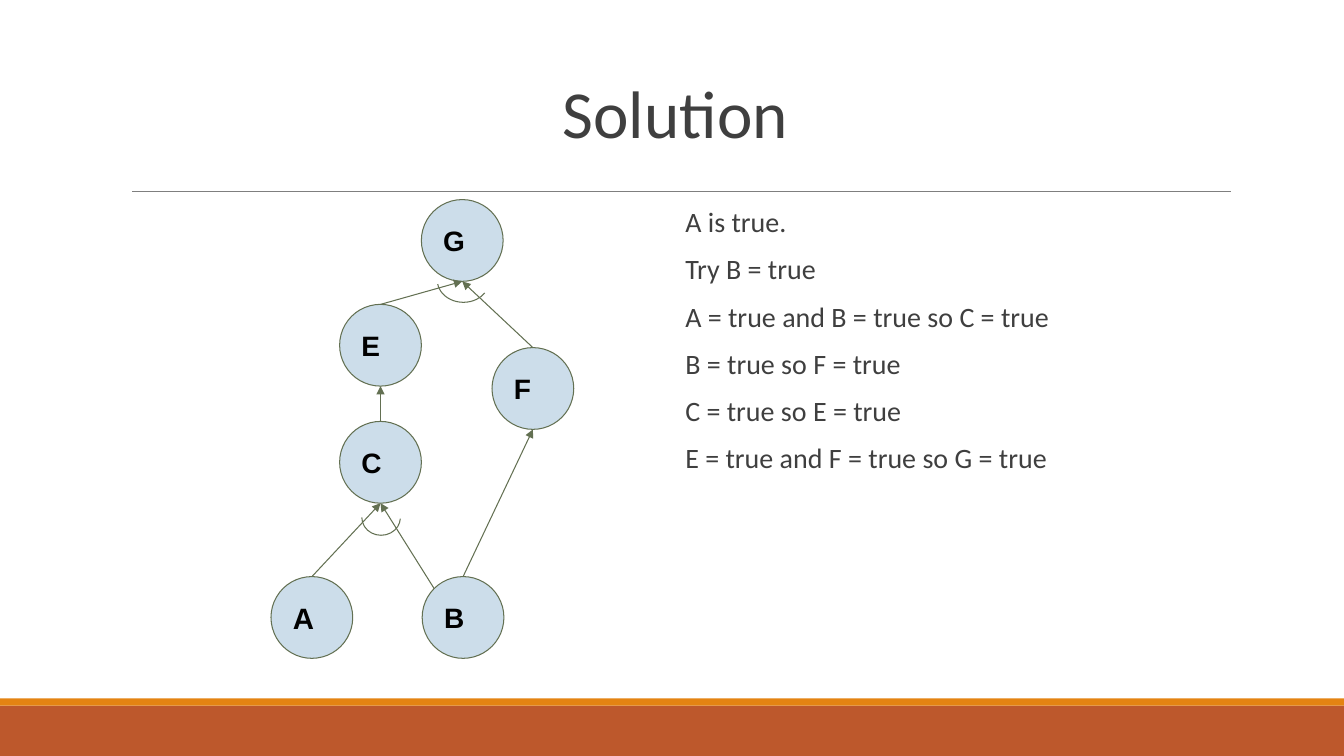
import math

import pptx
import pptx.dml.color
import pptx.enum.shapes
import pptx.enum.text
import pptx.oxml.ns
import pptx.util
from lxml import etree

Cm, Pt = pptx.util.Cm, pptx.util.Pt
qn = pptx.oxml.ns.qn
PRESET = pptx.enum.shapes.MSO_SHAPE
ALIGN = pptx.enum.text.PP_ALIGN
ANCHOR = pptx.enum.text.MSO_ANCHOR

COLOURS = {
    "band": "BD582C",
    "stripe": "E48312",
    "rule": "7F7F7F",
    "text": "3F3F3F",
    "label": "000000",
    "node": "CCDDEA",
    "edge": "637052",
}
DIAMETER = 2.06


def rgb(name):
    return pptx.dml.color.RGBColor.from_string(COLOURS[name])


def write(frame, *lines, size, font, colour, bold=False, align=ALIGN.LEFT,
          anchor=ANCHOR.TOP, spacing=1.0, before=0, insets=(0.25, 0.13, 0.25, 0.13)):
    """Fill a text frame with one unbulleted paragraph per line."""
    frame.word_wrap = True
    frame.auto_size = pptx.enum.text.MSO_AUTO_SIZE.NONE
    frame.vertical_anchor = anchor
    (frame.margin_left, frame.margin_top,
     frame.margin_right, frame.margin_bottom) = map(Cm, insets)
    for number, line in enumerate(lines):
        paragraph = frame.paragraphs[0] if number == 0 else frame.add_paragraph()
        paragraph.alignment = align
        paragraph.line_spacing = spacing
        paragraph.space_before = Pt(before)
        properties = paragraph._p.get_or_add_pPr()
        properties.set("marL", "0")
        properties.set("indent", "0")
        etree.SubElement(properties, qn("a:buNone"))
        run = paragraph.add_run()
        run.text = line
        run.font.size = Pt(size)
        run.font.name = font
        run.font.bold = bold
        run.font.color.rgb = rgb(colour)


class GraphSlide:
    """Holds the slide and the look shared by its elements."""

    line_width = Pt(0.75)

    def __init__(self, slide):
        self.slide = slide

    def placeholder(self, index, left, top, width, height, *lines, **style):
        holder = self.slide.placeholders[index]
        holder.left, holder.top = Cm(left), Cm(top)
        holder.width, holder.height = Cm(width), Cm(height)
        write(holder.text_frame, *lines, **style)

    def shape(self, preset, left, top, width, height, fill=None, line=None):
        shape = self.slide.shapes.add_shape(
            preset, Cm(left), Cm(top), Cm(width), Cm(height))
        shape.shadow.inherit = False
        if fill:
            shape.fill.solid()
            shape.fill.fore_color.rgb = rgb(fill)
        else:
            shape.fill.background()
        if line:
            shape.line.color.rgb = rgb(line)
            shape.line.width = self.line_width
        else:
            shape.line.fill.background()
        return shape

    def node(self, letter, left, top, size=20):
        circle = self.shape(PRESET.OVAL, left, top, DIAMETER, DIAMETER, "node", "edge")
        write(circle.text_frame, letter, size=size, font="Arial", colour="label",
              bold=True, anchor=ANCHOR.MIDDLE, insets=(0.25,) * 4)
        return circle

    def line(self, start, end, colour):
        connector = self.slide.shapes.add_connector(
            pptx.enum.shapes.MSO_CONNECTOR.STRAIGHT, *start, *end)
        connector.line.color.rgb = rgb(colour)
        connector.line.width = self.line_width
        etree.SubElement(connector._element.spPr, qn("a:effectLst"))
        return connector

    def arrow(self, source, target, angle=90):
        """Run from the source's rim, at an angle, to the target's bottom."""
        connector = self.line(rim(source, angle), rim(target, -90), "edge")
        if angle == 90:
            connector.begin_connect(source, 0)
        outline = connector._element.spPr.find(qn("a:ln"))
        etree.SubElement(outline, qn("a:tailEnd"), type="triangle")

    def arc(self, left, top, width, height, start, end):
        """Draw an arc between two clockwise angles in degrees."""
        arc = self.shape(PRESET.ARC, left, top, width, height, line="edge")
        # Angles are stored in 1/60000 degree, adjustments in 1/100000
        arc.adjustments[0], arc.adjustments[1] = start * 0.6, end * 0.6


def rim(circle, angle):
    radius = circle.width / 2
    turn = math.radians(angle)
    return (round(circle.left + radius + radius * math.cos(turn)),
            round(circle.top + radius - radius * math.sin(turn)))


def main():
    deck = pptx.Presentation()
    deck.slide_width, deck.slide_height = Cm(33.87), Cm(19.05)
    page = GraphSlide(deck.slides.add_slide(deck.slide_layouts[1]))

    # Footer bands and title rule
    page.shape(PRESET.RECTANGLE, 0, 17.78, 33.87, 1.27, "band")
    page.shape(PRESET.RECTANGLE, 0, 17.6, 33.87, 0.18, "stripe")
    page.line((Cm(3.33), Cm(4.83)), (Cm(31.01), Cm(4.83)), "rule")

    # Title and reasoning steps
    page.placeholder(0, 3.05, 0.79, 27.94, 4.04, "Solution",
                     size=48, font="Calibri", colour="text", align=ALIGN.CENTER,
                     anchor=ANCHOR.BOTTOM, spacing=0.85,
                     insets=(0.25, 0.13, 0.25, 0.99))
    page.placeholder(1, 17.27, 5.13, 13.72, 11.18,
                     "A is true.",
                     "Try B = true",
                     "A = true and B = true so C = true",
                     "B = true so F = true",
                     "C = true so E = true",
                     "E = true and F = true so G = true",
                     size=20, font="Calibri", colour="text", spacing=0.9, before=12,
                     insets=(0, 0.13, 0, 0.13))

    # Proposition nodes
    a = page.node("A", 6.83, 14.53, size=21)
    b = page.node("B", 10.64, 14.53)
    c = page.node("C", 8.56, 10.62)
    e = page.node("E", 8.56, 7.67)
    f = page.node("F", 12.4, 8.76)
    g = page.node("G", 10.62, 5.03)

    # Implications
    page.arrow(a, c)
    page.arrow(b, c, angle=135)
    for source, target in ((b, f), (c, e), (e, g), (f, g)):
        page.arrow(source, target)

    # Arcs marking "and"
    page.arc(11.02, 6.5, 1.32, 1.12, 30.92, 171.19)
    page.arc(9.12, 12.6, 0.97, 0.89, 3.17, 181.08)

    deck.save("out.pptx")


if __name__ == "__main__":
    main()
